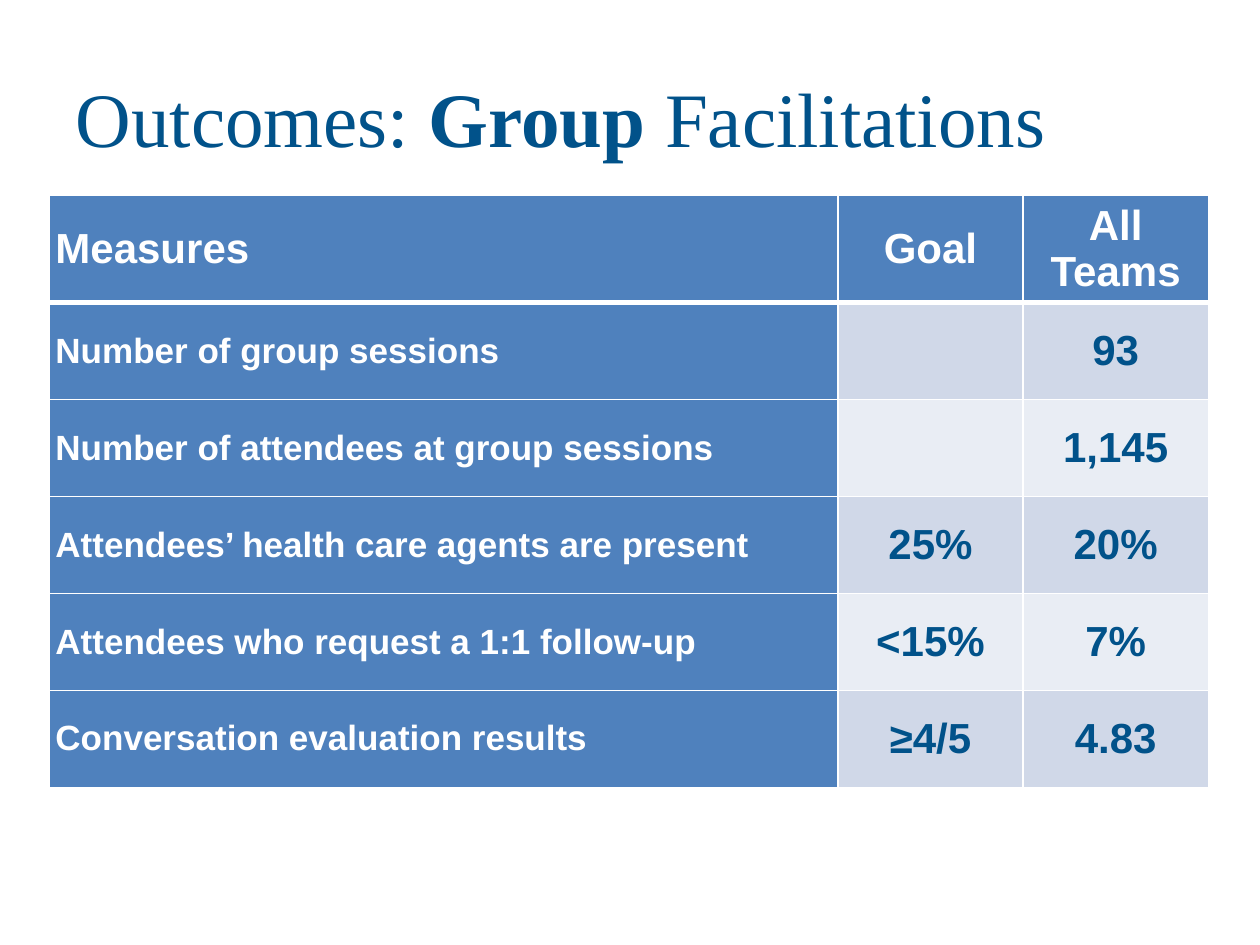
from lxml import etree
from pptx import Presentation
from pptx.dml.color import RGBColor
from pptx.enum.text import MSO_ANCHOR, PP_ALIGN
from pptx.oxml.ns import qn
from pptx.util import Inches, Pt

COLORS = {
    "navy": "01528A",
    "white": "FFFFFF",
    "header": "4F81BD",
    "band_dark": "D0D8E8",
    "band_light": "E9EDF4",
}
TITLE_PARTS = [("Outcomes: ", False), ("Group", True), (" Facilitations", False)]
OUTCOMES = [
    ("Measures", "Goal", "All Teams"),
    ("Number of group sessions", "", "93"),
    ("Number of attendees at group sessions", "", "1,145"),
    ("Attendees’ health care agents are present", "25%", "20%"),
    ("Attendees who request a 1:1 follow-up", "<15%", "7%"),
    ("Conversation evaluation results", "≥4/5", "4.83"),
]
COLUMN_WIDTHS = (6.26, 1.47, 1.47)
HEADER_HEIGHT, ROW_HEIGHT = 0.85, 0.77
CELL_MARGIN = Inches(0.05)


def rgb(name):
    return RGBColor.from_string(COLORS[name])


def style_font(font, face, size, color, bold):
    font.name = face
    font.size = Pt(size)
    font.bold = bold
    font.color.rgb = rgb(color)


def add_title(slide, left, top, width, height):
    title = slide.shapes.title
    title.left, title.top = Inches(left), Inches(top)
    title.width, title.height = Inches(width), Inches(height)
    title.text_frame.vertical_anchor = MSO_ANCHOR.MIDDLE
    paragraph = title.text_frame.paragraphs[0]
    paragraph.alignment = PP_ALIGN.LEFT
    for words, bold in TITLE_PARTS:
        run = paragraph.add_run()
        run.text = words
        style_font(run.font, "Times New Roman", 44, "navy", bold)


def set_borders(cell, top, bottom):
    """Draw white cell borders; top and bottom are widths in points."""
    properties = cell._tc.get_or_add_tcPr()
    for side, points in (("L", 1), ("R", 1), ("T", top), ("B", bottom)):
        line = etree.SubElement(properties, qn(f"a:ln{side}"), w=str(Pt(points)))
        fill = etree.SubElement(line, qn("a:solidFill"))
        etree.SubElement(fill, qn("a:srgbClr"), val=COLORS["white"])


def format_cell(cell, row, column, words):
    is_heading = row == 0 or column == 0
    band = "band_dark" if row % 2 else "band_light"
    set_borders(cell, top=3 if row == 1 else 1, bottom=3 if row == 0 else 1)
    cell.fill.solid()
    cell.fill.fore_color.rgb = rgb("header" if is_heading else band)
    cell.vertical_anchor = MSO_ANCHOR.MIDDLE
    cell.margin_left = cell.margin_right = CELL_MARGIN
    cell.margin_top = cell.margin_bottom = CELL_MARGIN
    paragraph = cell.text_frame.paragraphs[0]
    paragraph.text = words
    paragraph.alignment = PP_ALIGN.CENTER if column else PP_ALIGN.LEFT
    size = 20 if row and not column else 24
    for run in paragraph.runs:
        style_font(run.font, "Arial", size, "white" if is_heading else "navy", True)


def add_outcomes_table(slide, left, top):
    row_heights = [HEADER_HEIGHT] + [ROW_HEIGHT] * (len(OUTCOMES) - 1)
    table = slide.shapes.add_table(
        len(OUTCOMES), len(COLUMN_WIDTHS), Inches(left), Inches(top),
        Inches(sum(COLUMN_WIDTHS)), Inches(sum(row_heights)),
    ).table
    table.first_col = True
    for column, width in zip(table.columns, COLUMN_WIDTHS):
        column.width = Inches(width)
    for row, height in zip(table.rows, row_heights):
        row.height = Inches(height)
    for r, measure in enumerate(OUTCOMES):
        for c, words in enumerate(measure):
            format_cell(table.cell(r, c), r, c, words)


def main():
    deck = Presentation()
    deck.slide_width, deck.slide_height = Inches(10), Inches(7.5)
    slide = deck.slides.add_slide(deck.slide_layouts[5])
    add_title(slide, 0.5, 0.3, 9, 1.25)
    add_outcomes_table(slide, 0.39, 1.55)
    deck.save("out.pptx")


if __name__ == "__main__":
    main()
